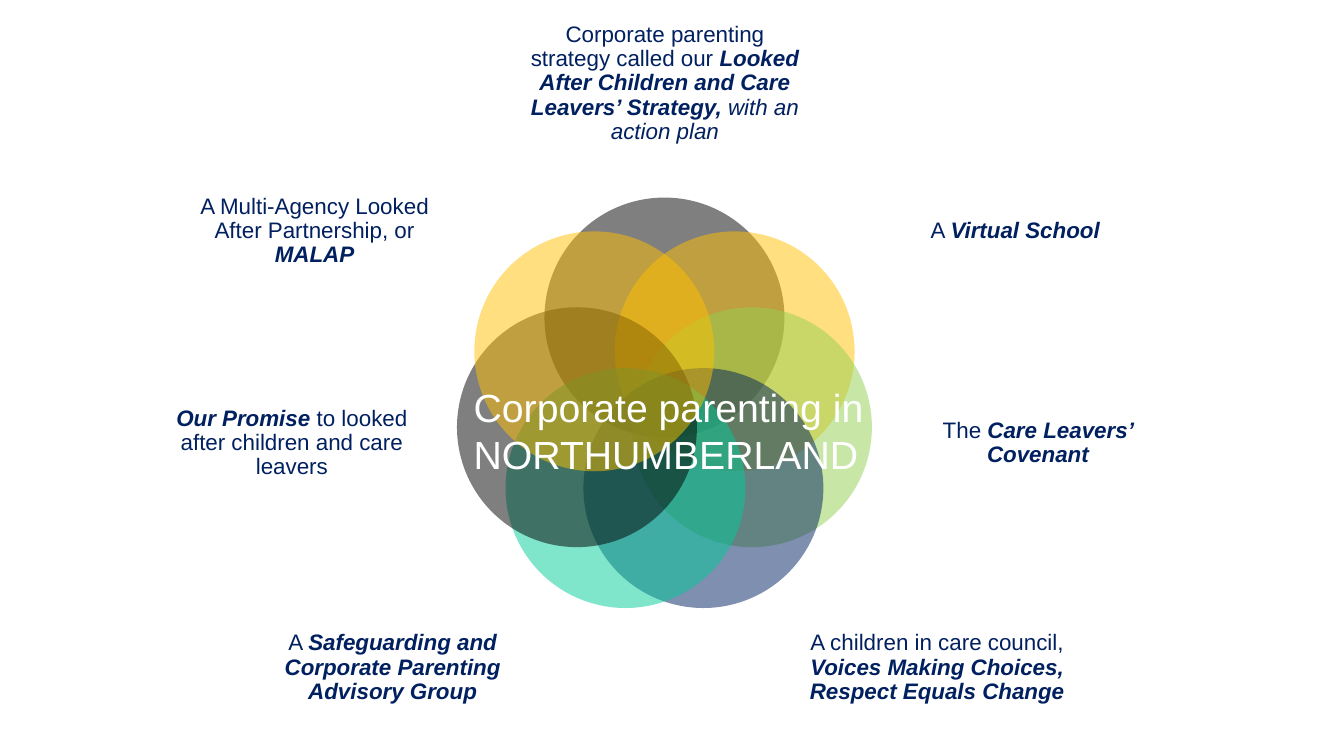
"""Build a slide with seven overlapping circles, their labels and a centre title."""
from dataclasses import dataclass
from math import cos, pi, sin

from lxml import etree
from pptx import Presentation
from pptx import util as u
from pptx.dml.color import RGBColor
from pptx.enum import shapes, text
from pptx.oxml.ns import qn
from pptx.shapes.autoshape import Shape
from pptx.slide import Slide


@dataclass(frozen=True)
class Theme:
    """Colours, font and type sizes."""
    font: str = "Arial"
    label: int = 16
    title: int = 28
    navy: str = "002060"
    white: str = "FFFFFF"
    black: str = "000000"
    gold: str = "FFC000"
    lime: str = "92D050"
    teal: str = "00CC99"
    alpha: int = 50


@dataclass(frozen=True)
class Box:
    """A place on the slide in inches."""
    left: float
    top: float
    width: float
    height: float

    def emu(self) -> tuple[u.Length, ...]:
        """Return the four lengths."""
        return tuple(u.Inches(v) for v in (self.left, self.top, self.width, self.height))


@dataclass(frozen=True)
class Run:
    """A piece of text in one style."""
    words: str
    bold: bool = False
    slant: bool = False


@dataclass(frozen=True)
class Petal:
    """One circle of the ring with its label."""
    fill: str
    box: Box
    runs: tuple[Run, ...]


THEME = Theme()
MID_X, MID_Y, ORBIT, SIZE = 6.59, 4.04, 0.89, 2.38


def strong(words: str) -> Run:
    """Return a bold italic run."""
    return Run(words, True, True)


PETALS = (
    Petal(THEME.black, Box(5.23, 0.1, 2.73, 1.46), (
        Run("Corporate parenting strategy called our "),
        strong("Looked After Children and Care Leavers’ Strategy, "),
        Run("with an action plan", slant=True))),
    Petal(THEME.gold, Box(8.78, 1.49, 2.58, 1.61), (
        Run("A "), strong("Virtual School"))),
    Petal(THEME.lime, Box(9.03, 3.54, 2.53, 1.72), (
        Run("The "), strong("Care Leavers’ Covenant"))),
    Petal(THEME.navy, Box(7.93, 5.84, 2.73, 1.57), (
        Run("A children in care council, "),
        strong("Voices Making Choices, Respect Equals Change"))),
    Petal(THEME.teal, Box(2.53, 5.84, 2.73, 1.57), (
        Run("A "), strong("Safeguarding and Corporate Parenting Advisory Group"))),
    Petal(THEME.black, Box(1.63, 3.54, 2.53, 1.72), (
        strong("Our Promise "), Run("to looked after children and care leavers"))),
    Petal(THEME.gold, Box(1.83, 1.49, 2.58, 1.61), (
        Run("A Multi-Agency Looked After Partnership, or "), strong("MALAP"))),
)


def add_disc(slide: Slide, turn: float, fill: str) -> None:
    """Draw a see-through circle at an angle clockwise from the top."""
    left = MID_X + ORBIT * sin(turn) - SIZE / 2
    top = MID_Y - ORBIT * cos(turn) - SIZE / 2
    disc = slide.shapes.add_shape(shapes.MSO_SHAPE.OVAL, *Box(left, top, SIZE, SIZE).emu())
    disc.shadow.inherit = False
    disc.line.fill.background()
    disc.fill.solid()
    disc.fill.fore_color.rgb = RGBColor.from_string(fill)
    tint = next(disc.element.spPr.iter(qn("a:srgbClr")))
    etree.SubElement(tint, qn("a:alpha"), val=str(THEME.alpha * 1000))


def add_text(slide: Slide, box: Box, runs: tuple[Run, ...], size: int, ink: str) -> Shape:
    """Draw a wrapping text box run by run."""
    shape = slide.shapes.add_textbox(*box.emu())
    frame = shape.text_frame
    frame.word_wrap = True
    for item in runs:
        run = frame.paragraphs[0].add_run()
        run.text = item.words
        font = run.font
        font.name, font.size = THEME.font, u.Pt(size)
        font.bold, font.italic = item.bold, item.slant
        font.color.rgb = RGBColor.from_string(ink)
    return shape


def add_label(slide: Slide, petal: Petal) -> None:
    """Draw a centred label without margins."""
    frame = add_text(slide, petal.box, petal.runs, THEME.label, THEME.navy).text_frame
    frame.margin_left = frame.margin_right = frame.margin_top = frame.margin_bottom = 0
    frame.vertical_anchor = text.MSO_ANCHOR.MIDDLE
    frame.paragraphs[0].alignment = text.PP_ALIGN.CENTER
    frame.paragraphs[0].line_spacing = 0.9


def main() -> None:
    """Build and save the slide."""
    deck = Presentation()
    deck.slide_width, deck.slide_height = u.Inches(13.33), u.Inches(7.5)
    slide = deck.slides.add_slide(deck.slide_layouts[6])
    for step, petal in enumerate(PETALS):
        add_disc(slide, step * 2 * pi / len(PETALS), petal.fill)
        add_label(slide, petal)
    title = add_text(slide, Box(4.6, 3.75, 4.14, 1.04),
                     (Run("Corporate parenting in NORTHUMBERLAND"),),
                     THEME.title, THEME.white)
    title.text_frame.auto_size = text.MSO_AUTO_SIZE.SHAPE_TO_FIT_TEXT
    deck.save("out.pptx")


if __name__ == "__main__":
    main()
